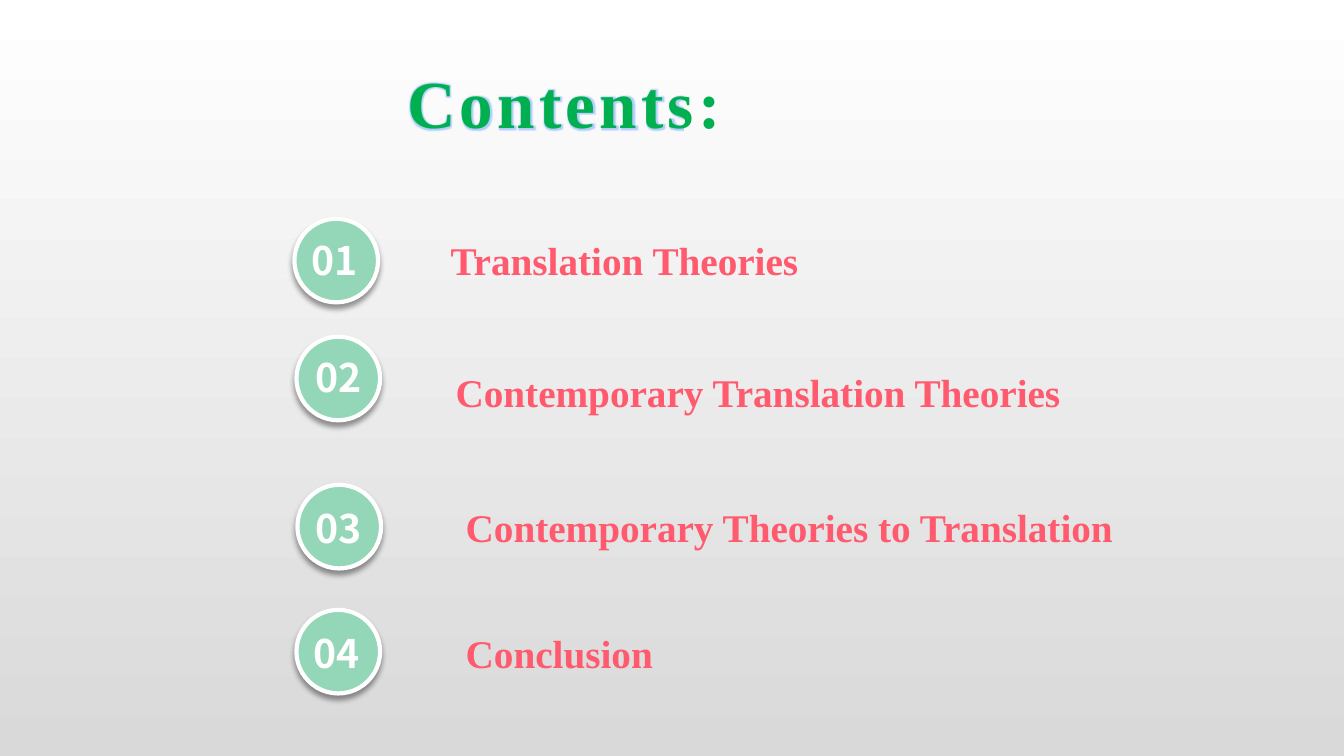
from lxml.etree import fromstring
from pptx import Presentation
from pptx.dml.color import RGBColor
from pptx.enum.shapes import MSO_SHAPE as Shape
from pptx.enum.text import MSO_ANCHOR as Anchor, MSO_AUTO_SIZE as AutoSize, PP_ALIGN as Align
from pptx.util import Inches, Pt

NS = 'xmlns:a="http://schemas.openxmlformats.org/drawingml/2006/main"'
SERIF, SANS = "Times New Roman", "Noto Sans CJK SC"
GREEN, MINT, WHITE = "00B050", "94D7B8", "FFFFFF"
ROSE_STOPS = ((0, "980C21"), (78, "FF5A6E"), (100, "FFF1F2"))
ENTRIES = (
    ("01", (2.92, 2.17), (2.88, 2.3), "Translation Theories", (4.37, 2.3), 4.59),
    ("02", (2.94, 3.34), (2.92, 3.46), "Contemporary Translation Theories", (4.42, 3.6), 6.69),
    ("03", (2.95, 4.81), (2.92, 4.95), "Contemporary Theories to Translation", (4.52, 4.94), 7.38),
    ("04", (2.94, 6.05), (2.9, 6.19), "Conclusion", (4.52, 6.19), 7.59),
)


def color(code):
    return RGBColor.from_string(code)


def element(xml):
    return fromstring(xml.replace(">", f" {NS}>", 1))


class ContentsSlide:
    """Draws a contents page in one consistent style."""

    def __init__(self, deck):
        self.slide = deck.slides.add_slide(deck.slide_layouts[5])
        fill = self.slide.background.fill
        fill.gradient()
        fill.gradient_angle = 270
        for stop, code in zip(fill.gradient_stops, (WHITE, "D9D9D9")):
            stop.color.rgb = color(code)

    def add_text(self, box, text, size, face, align=Align.LEFT):
        frame = box.text_frame
        frame_format = {"word_wrap": True, "auto_size": AutoSize.SHAPE_TO_FIT_TEXT,
                        "vertical_anchor": Anchor.TOP}
        for name, value in frame_format.items():
            setattr(frame, name, value)
        line = frame.paragraphs[0]
        line.alignment = align
        run = line.add_run()
        run.text = text
        for name, value in {"size": Pt(size), "name": face, "bold": True}.items():
            setattr(run.font, name, value)
        return run

    def paint(self, run, code):
        run.font.fill.solid()
        run.font.fill.fore_color.rgb = color(code)

    def title(self, text):
        heading = self.slide.shapes.title
        place = {"left": 3.94, "top": 0.56, "width": 4.58, "height": 0.91}
        for name, value in place.items():
            setattr(heading, name, Inches(value))
        run = self.add_text(heading, text, 48, SERIF)
        self.paint(run, GREEN)
        props = run.font._element
        props.set("spc", "300")
        props.insert(0, element('<a:ln w="11430"><a:solidFill><a:srgbClr val="F5F7FD"/>'
                                '</a:solidFill></a:ln>'))
        props.insert(2, element('<a:effectLst><a:glow rad="45500"><a:srgbClr val="2B7BFF">'
                                '<a:alpha val="35000"/></a:srgbClr></a:glow></a:effectLst>'))

    def badge(self, number, circle_at, number_at):
        group = self.slide.shapes.add_group_shape()
        circle = group.shapes.add_shape(Shape.OVAL, *map(Inches, (*circle_at, 0.83, 0.83)))
        circle.fill.solid()
        circle.fill.fore_color.rgb = color(MINT)
        circle.line.color.rgb = color(WHITE)
        circle.line.width = Pt(3)
        circle.shadow.inherit = False
        effects = circle._element.spPr.find("{*}effectLst")
        effects.append(element(
            f'<a:outerShdw blurRad="{Pt(4)}" dist="{Pt(3)}" dir="5400000" rotWithShape="0">'
            '<a:srgbClr val="000000"><a:alpha val="40000"/></a:srgbClr></a:outerShdw>'))
        label = group.shapes.add_textbox(*map(Inches, (*number_at, 0.87, 0.57)))
        self.paint(self.add_text(label, number, 28, SANS, Align.CENTER), WHITE)

    def topic(self, text, at, width):
        box = self.slide.shapes.add_textbox(*map(Inches, (*at, width, 0.57)))
        run = self.add_text(box, text, 28, SERIF)
        stops = "".join(f'<a:gs pos="{pos * 1000}"><a:srgbClr val="{code}"/></a:gs>'
                        for pos, code in ROSE_STOPS)
        run.font._element.insert(0, element(
            f'<a:gradFill><a:gsLst>{stops}</a:gsLst><a:lin ang="5400000"/></a:gradFill>'))


def main():
    deck = Presentation()
    deck.slide_width, deck.slide_height = Inches(13.33), Inches(7.5)
    page = ContentsSlide(deck)
    page.title("Contents:")
    for number, circle_at, number_at, topic, topic_at, width in ENTRIES:
        page.badge(number, circle_at, number_at)
        page.topic(topic, topic_at, width)
    deck.save("out.pptx")


if __name__ == "__main__":
    main()
